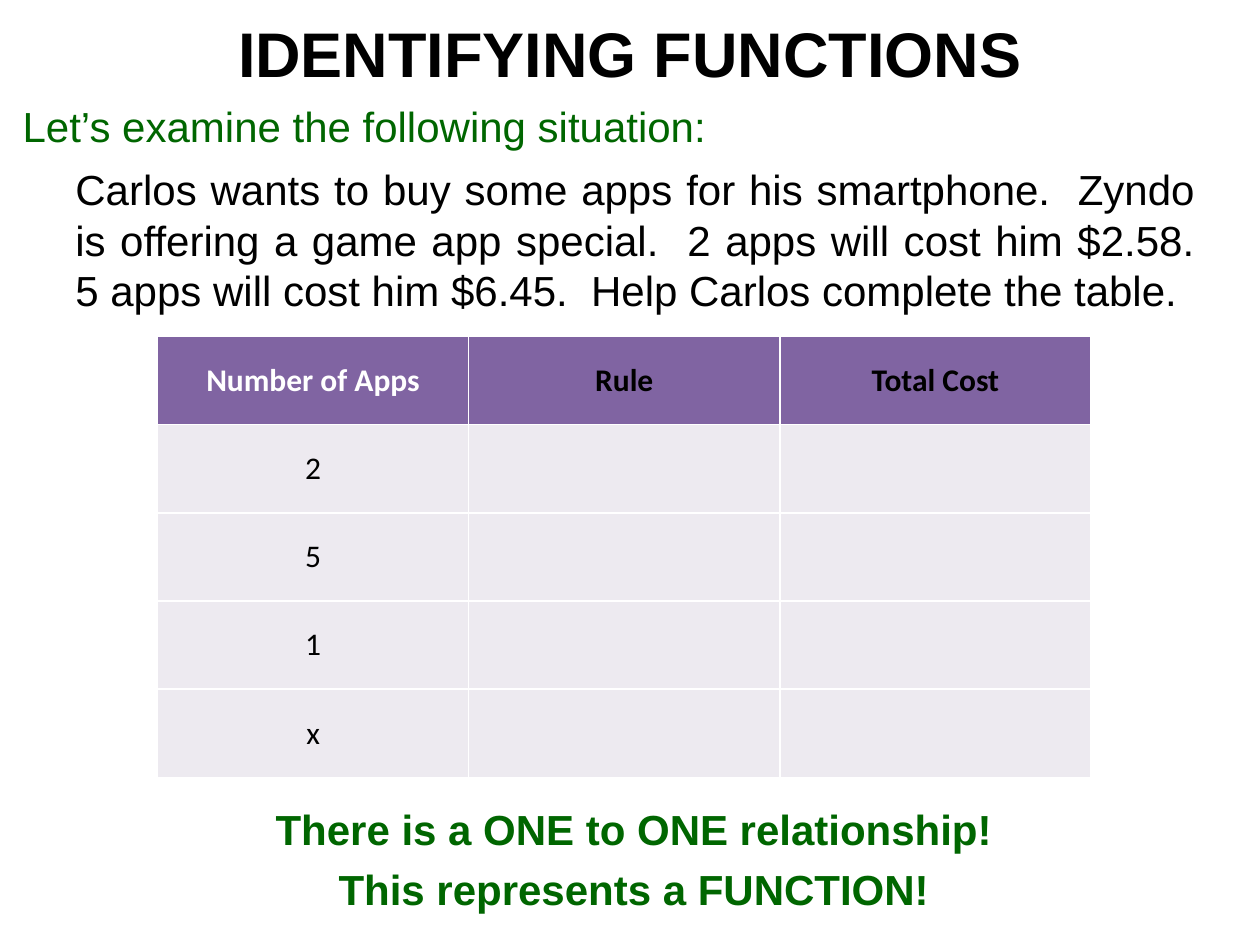
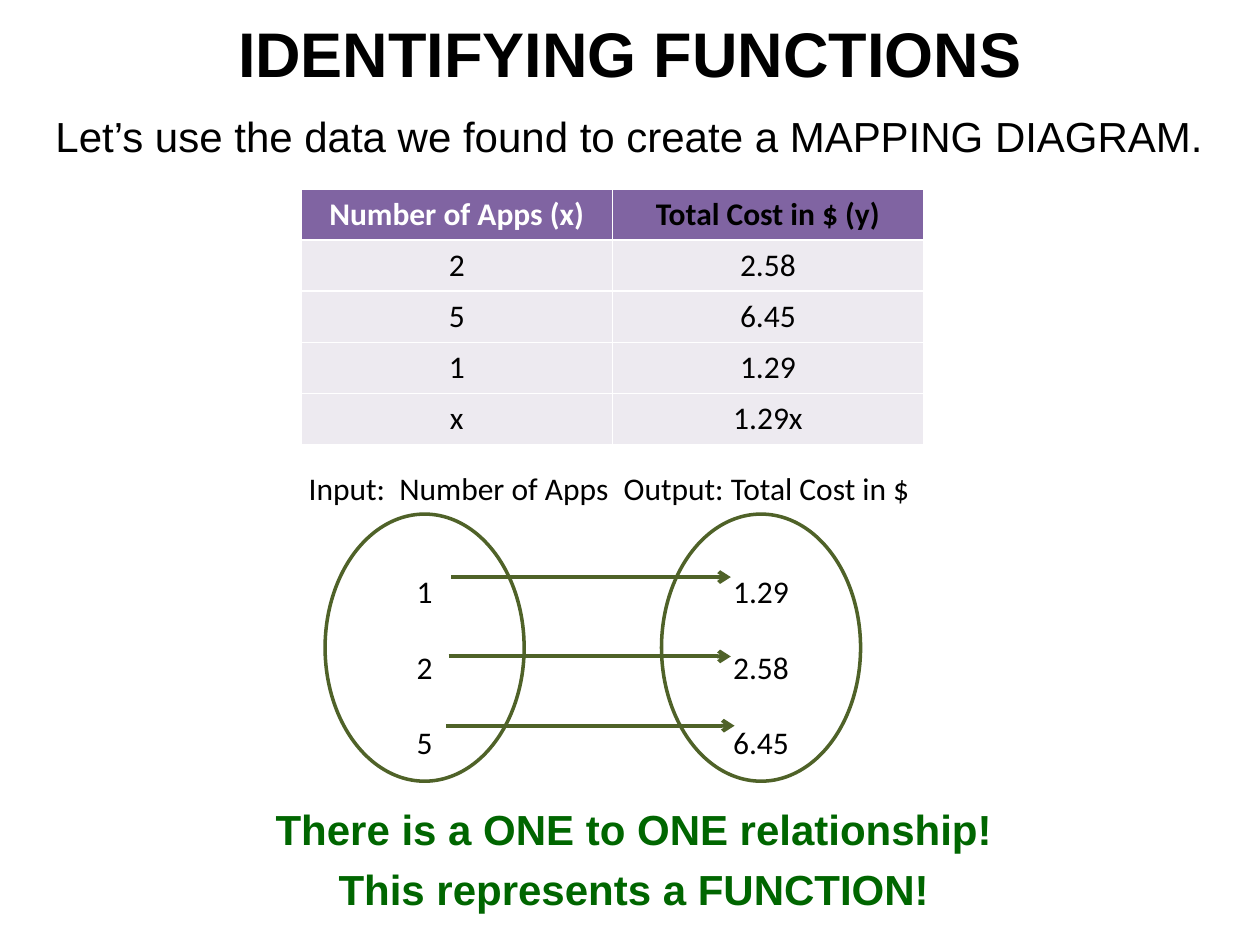
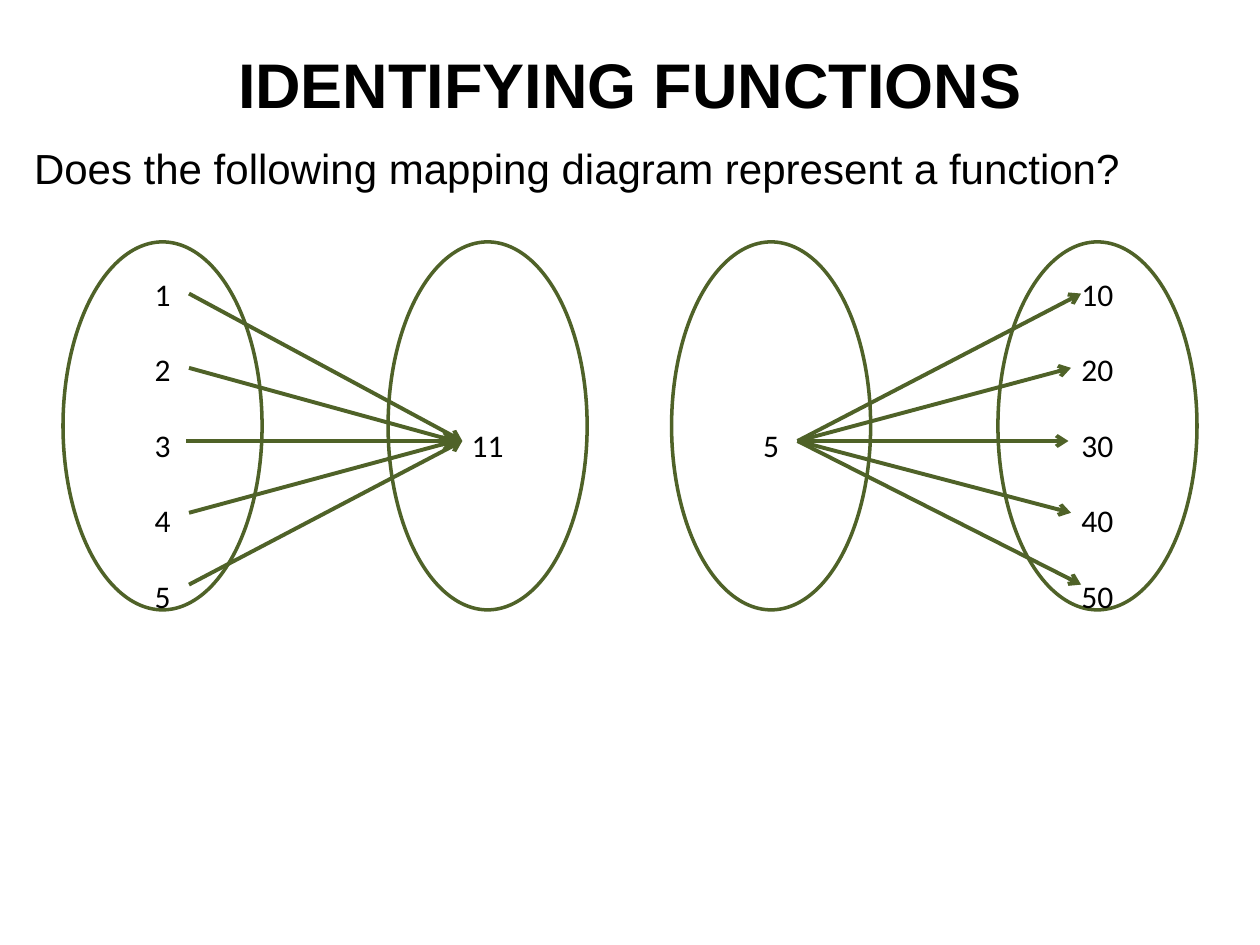
from dataclasses import dataclass

from lxml.etree import SubElement
from pptx import Presentation
from pptx.dml.color import RGBColor
from pptx.enum.shapes import MSO_CONNECTOR as Connector, MSO_SHAPE as Preset
from pptx.enum.text import MSO_ANCHOR as Anchor, MSO_AUTO_SIZE as AutoSize, PP_ALIGN as Align
from pptx.oxml.ns import qn
from pptx.shapes.base import BaseShape
from pptx.slide import Slide
from pptx.text.text import TextFrame
from pptx.util import Inches, Pt

COLORS = {
    "black": "000000",
    "white": "FFFFFF",
    "green": "006600",
    "olive": "4F6228",
    "header": "8064A2",
    "cell": "EDEAF0",
}
COLUMN_WIDTH = 2.47
OVAL_WIDTH = 1.58
CONCLUSION = "There is a ONE to ONE relationship!\nThis represents a FUNCTION!"


@dataclass(frozen=True)
class Box:
    left: float
    top: float
    width: float
    height: float


@dataclass(frozen=True)
class Style:
    size: float = 24
    font: str = "Arial"
    color: str = "black"
    bold: bool = False
    align: Align = Align.LEFT
    before: float = 5.5
    spacing: float = 1.0


@dataclass(frozen=True)
class Oval:
    left: float
    top: float
    height: float
    values: str


@dataclass(frozen=True)
class Arrow:
    x1: float
    y1: float
    x2: float
    y2: float


TITLE = Style(size=36, bold=True, align=Align.CENTER, before=0)
PROMPT = Style()
CENTERED_PROMPT = Style(align=Align.CENTER)
GREEN_PROMPT = Style(color="green")
SITUATION = Style(align=Align.JUSTIFY)
RESULT = Style(color="green", bold=True, align=Align.CENTER)
LABEL = Style(size=18, font="Calibri", align=Align.CENTER, before=0)
HEADING = Style(size=18, font="Calibri", bold=True, align=Align.CENTER, before=0)
FIRST_HEADING = Style(size=18, font="Calibri", color="white", bold=True, align=Align.CENTER, before=0)
MEMBERS = Style(size=18, font="Calibri", align=Align.CENTER, before=0, spacing=2.0)


def rgb(color: str) -> RGBColor:
    return RGBColor.from_string(COLORS[color])


def write(frame: TextFrame, text: str, style: Style) -> None:
    frame.text = text
    for paragraph in frame.paragraphs:
        paragraph.alignment = style.align
        paragraph.space_before = Pt(style.before)
        paragraph.line_spacing = style.spacing
        for run in paragraph.runs:
            run.font.size = Pt(style.size)
            run.font.name = style.font
            run.font.bold = style.bold
            run.font.color.rgb = rgb(style.color)


def place(shape: BaseShape, box: Box) -> None:
    shape.left, shape.top = Inches(box.left), Inches(box.top)
    shape.width, shape.height = Inches(box.width), Inches(box.height)


def start_slide(deck: Presentation, prompt: str, box: Box, style: Style, title_top: float = 0) -> Slide:
    slide = deck.slides.add_slide(deck.slide_layouts[1])
    title, body = slide.placeholders
    place(title, Box(0, title_top, 10, 0.83))
    write(title.text_frame, "IDENTIFYING FUNCTIONS", TITLE)
    title.text_frame.vertical_anchor = Anchor.MIDDLE
    place(body, box)
    write(body.text_frame, prompt, style)
    for frame in (title.text_frame, body.text_frame):
        frame.auto_size = AutoSize.NONE
    for paragraph in body.text_frame.paragraphs:
        properties = paragraph._p.get_or_add_pPr()
        properties.set("marL", "0")
        properties.set("indent", "0")
        SubElement(properties, qn("a:buNone"))
    return slide


def add_text(slide: Slide, text: str, box: Box, style: Style) -> None:
    textbox = slide.shapes.add_textbox(0, 0, 0, 0)
    place(textbox, box)
    textbox.text_frame.word_wrap = True
    write(textbox.text_frame, text, style)


def add_conclusion(slide: Slide) -> None:
    add_text(slide, CONCLUSION, Box(0.74, 6.33, 8.58, 1.08), RESULT)


def add_cost_table(slide: Slide, rows: list[list[str]], left: float, top: float, row_height: float) -> None:
    columns = len(rows[0])
    table = slide.shapes.add_table(
        len(rows), columns, Inches(left), Inches(top),
        Inches(COLUMN_WIDTH * columns), Inches(row_height * len(rows)),
    ).table
    table.horz_banding = False
    for column in table.columns:
        column.width = Inches(COLUMN_WIDTH)
    for row_index, row in enumerate(rows):
        table.rows[row_index].height = Inches(row_height)
        for column_index, text in enumerate(row):
            cell = table.cell(row_index, column_index)
            cell.fill.solid()
            cell.fill.fore_color.rgb = rgb("cell" if row_index else "header")
            cell.vertical_anchor = Anchor.MIDDLE
            heading = HEADING if column_index else FIRST_HEADING
            write(cell.text_frame, text, LABEL if row_index else heading)


def add_oval(slide: Slide, oval: Oval) -> None:
    shape = slide.shapes.add_shape(
        Preset.OVAL, Inches(oval.left), Inches(oval.top), Inches(OVAL_WIDTH), Inches(oval.height)
    )
    shape.shadow.inherit = False
    shape.fill.solid()
    shape.fill.fore_color.rgb = rgb("white")
    shape.line.color.rgb = rgb("olive")
    shape.line.width = Pt(2)
    shape.text_frame.vertical_anchor = Anchor.MIDDLE
    write(shape.text_frame, "\n".join(oval.values.split()), MEMBERS)


def add_arrow(slide: Slide, arrow: Arrow) -> None:
    connector = slide.shapes.add_connector(
        Connector.STRAIGHT, Inches(arrow.x1), Inches(arrow.y1), Inches(arrow.x2), Inches(arrow.y2)
    )
    connector.line.color.rgb = rgb("olive")
    connector.line.width = Pt(2.25)
    SubElement(connector.line._get_or_add_ln(), qn("a:tailEnd"), type="arrow")
    SubElement(connector._element.spPr, qn("a:effectLst"))


def add_mapping(slide: Slide, ovals: list[Oval], arrows: list[Arrow]) -> None:
    for oval in ovals:
        add_oval(slide, oval)
    for arrow in arrows:
        add_arrow(slide, arrow)


def build_situation(deck: Presentation) -> None:
    slide = start_slide(
        deck, "Let’s examine the following situation:", Box(0.08, 0.75, 8.58, 0.67), GREEN_PROMPT
    )
    add_text(
        slide,
        "Carlos wants to buy some apps for his smartphone.  Zyndo is offering a game app special.  "
        "2 apps will cost him $2.58. 5 apps will cost him $6.45.  Help Carlos complete the table.",
        Box(0.5, 1.25, 9.08, 1.42),
        SITUATION,
    )
    rows = [["Number of Apps", "Rule", "Total Cost"]] + [[apps, "", ""] for apps in "251x"]
    add_cost_table(slide, rows, 1.25, 2.67, 0.7)
    add_conclusion(slide)


def build_mapping(deck: Presentation) -> None:
    slide = start_slide(
        deck, "Let’s use the data we found to create a MAPPING DIAGRAM.",
        Box(0.08, 0.83, 9.83, 0.58), CENTERED_PROMPT,
    )
    rows = [
        ["Number of Apps (x)", "Total Cost in $ (y)"],
        ["2", "2.58"],
        ["5", "6.45"],
        ["1", "1.29"],
        ["x", "1.29x"],
    ]
    add_cost_table(slide, rows, 2.39, 1.5, 0.4)
    add_mapping(
        slide,
        [Oval(2.58, 4.08, 2.12, "1 2 5"), Oval(5.25, 4.08, 2.12, "1.29 2.58 6.45")],
        [Arrow(3.58, 4.58, 5.8, 4.58), Arrow(3.56, 5.21, 5.8, 5.21), Arrow(3.54, 5.76, 5.83, 5.76)],
    )
    add_text(
        slide, "Input:  Number of Apps\tOutput: Total Cost in $", Box(1.92, 3.67, 5.83, 0.4), LABEL
    )
    add_conclusion(slide)


def build_question(deck: Presentation) -> None:
    slide = start_slide(
        deck, "Does the following mapping diagram represent a function?",
        Box(0.17, 1.08, 9.5, 0.67), PROMPT, title_top=0.25,
    )
    top, height, middle = 1.92, 2.92, 3.5
    levels = (2.33, 2.92, middle, 4.07, 4.64)
    input_starts = (1.5, 1.5, 1.48, 1.5, 1.5)
    input_ends = (3.67, 3.61, 3.65, 3.61, 3.67)
    output_ends = (8.58, 8.5, 8.48, 8.5, 8.58)
    add_mapping(
        slide,
        [Oval(0.5, top, height, "1 2 3 4 5"), Oval(3.08, top, height, "11")],
        [Arrow(x1, y, x2, middle) for x1, y, x2 in zip(input_starts, levels, input_ends)],
    )
    add_mapping(
        slide,
        [Oval(5.33, top, height, "5"), Oval(7.92, top, height, "10 20 30 40 50")],
        [Arrow(6.33, middle, x2, y) for x2, y in zip(output_ends, levels)],
    )


def main() -> None:
    deck = Presentation()
    deck.slide_width, deck.slide_height = Inches(10), Inches(7.5)
    build_situation(deck)
    build_mapping(deck)
    build_question(deck)
    deck.save("out.pptx")


if __name__ == "__main__":
    main()
